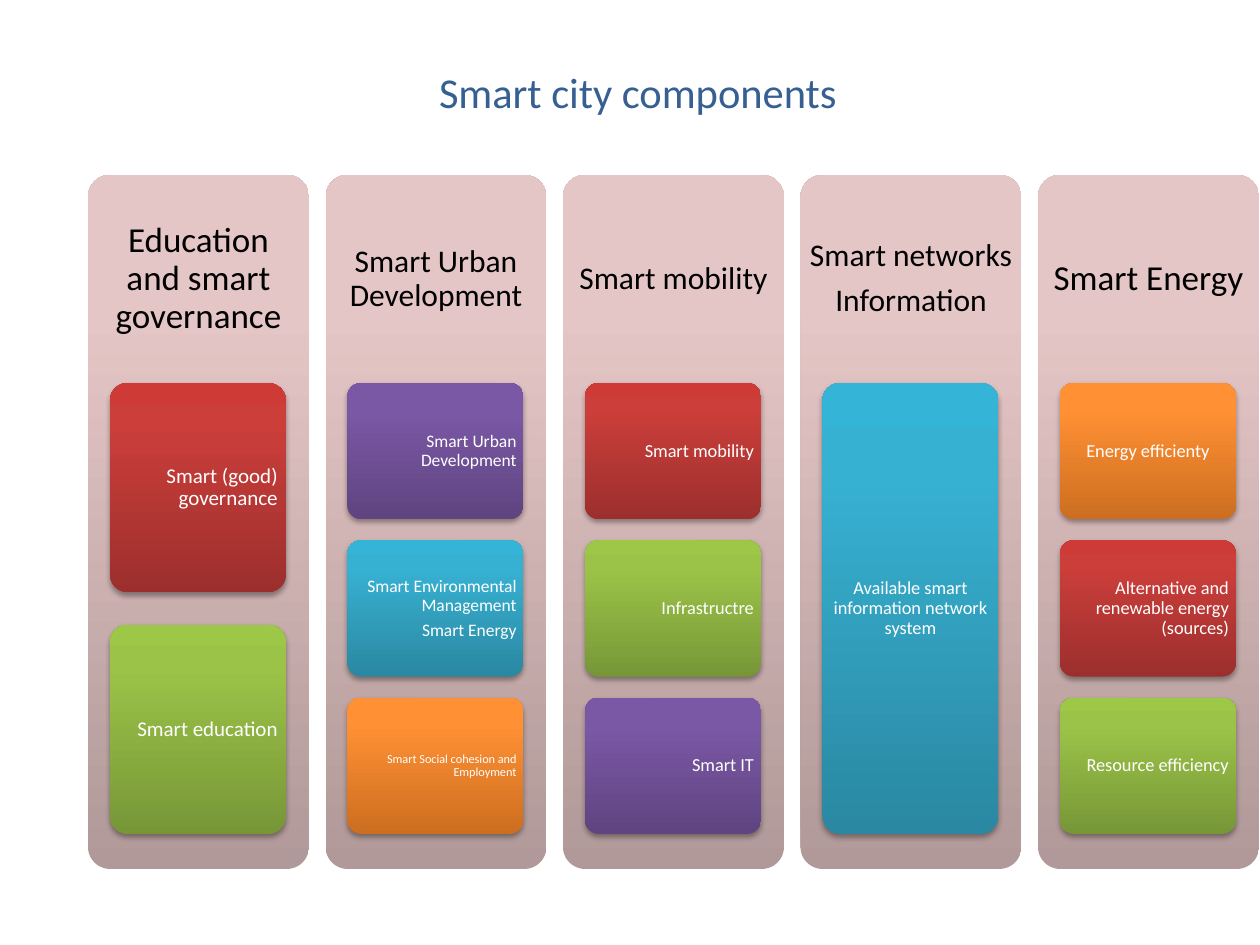
import copy

import pptx
import pptx.dml.color
import pptx.enum.shapes
import pptx.enum.text
import pptx.oxml
import pptx.oxml.ns
import pptx.util

ALIGN = pptx.enum.text.PP_ALIGN
FONT = "Calibri"
EMU_PER_PX = 914400 / 126

TITLE_RUNS = [(" ", 39.6), ("Smart city components", 24.3)]
TITLE_BOX = (63, 37, 1134, 87)

# Gradient colours from bottom to top, at these positions
STOP_POSITIONS = (0, 0.8, 1)
GRADIENTS = {
    "column": ("B09998", "E5C6C6", "E6C7C6"),
    "red": ("9C2F2D", "CB3E3A", "CE3B37"),
    "green": ("779737", "9BC348", "9DC746"),
    "purple": ("5F4480", "7B58A6", "7C57A8"),
    "blue": ("2A88A2", "37B1D2", "34B4D6"),
    "orange": ("CC6E20", "FF9034", "FF9136"),
}

# Heading, heading size, cards as (text, size, colour, alignment)
COLUMNS = [
    ("Education and smart governance", 20, [
        ("Smart (good) governance", 12, "red", ALIGN.RIGHT),
        ("Smart education", 12, "green", ALIGN.RIGHT),
    ]),
    ("Smart Urban Development", 18, [
        ("Smart Urban Development", 10, "purple", ALIGN.RIGHT),
        ("Smart Environmental Management\nSmart Energy", 10, "blue", ALIGN.RIGHT),
        ("Smart Social cohesion and Employment", 7, "orange", ALIGN.RIGHT),
    ]),
    ("Smart mobility", 18, [
        ("Smart mobility", 10.5, "red", ALIGN.RIGHT),
        ("Infrastructre", 10.5, "green", ALIGN.RIGHT),
        ("Smart IT", 10.5, "purple", ALIGN.RIGHT),
    ]),
    ("Smart networks\nInformation", 18, [
        ("Available smart information network system", 10.5, "blue", ALIGN.CENTER),
    ]),
    ("Smart Energy", 20, [
        ("Energy efficienty", 10.5, "orange", ALIGN.CENTER),
        ("Alternative and renewable energy (sources)", 10.5, "red", ALIGN.RIGHT),
        ("Resource efficiency", 10.5, "green", ALIGN.RIGHT),
    ]),
]

COLUMN_LEFT, COLUMN_TOP, COLUMN_WIDTH, COLUMN_HEIGHT = 88, 175, 221, 694
COLUMN_STEP = 237.5
HEADING_HEIGHT = 208
CARD_INDENT, CARD_WIDTH = 22, 176
CARDS_TOP, CARDS_HEIGHT = 383, 451
GAP_RATIO = 0.154  # gap between cards, as a share of card height

SHADOW = (
    '<a:outerShdw xmlns:a="http://schemas.openxmlformats.org/drawingml/2006/main" '
    'blurRad="40000" dist="23000" dir="5400000" rotWithShape="0">'
    '<a:srgbClr val="000000"><a:alpha val="35000"/></a:srgbClr></a:outerShdw>'
)


def px(value):
    return pptx.util.Emu(round(value * EMU_PER_PX))


def rgb(value):
    return pptx.dml.color.RGBColor.from_string(value)


def format_run(run, size, colour):
    run.font.name = FONT
    run.font.size = pptx.util.Pt(size)
    run.font.color.rgb = rgb(colour)


def write_text(shape, text, size, colour, alignment, inset):
    frame = shape.text_frame
    frame.text = text
    frame.word_wrap = True
    frame.vertical_anchor = pptx.enum.text.MSO_ANCHOR.MIDDLE
    frame.margin_left = frame.margin_right = px(inset)
    frame.margin_top = frame.margin_bottom = px(inset)
    for paragraph in frame.paragraphs:
        paragraph.alignment = alignment
        paragraph.line_spacing = 0.9
        paragraph.space_after = pptx.util.Pt(size * 0.35)
        for run in paragraph.runs:
            format_run(run, size, colour)


def add_panel(slide, box, colours, shadow=False):
    """Add a rounded rectangle with a vertical three-stop gradient."""
    shape = slide.shapes.add_shape(
        pptx.enum.shapes.MSO_SHAPE.ROUNDED_RECTANGLE, *map(px, box))
    shape.adjustments[0] = 0.1
    shape.line.fill.background()
    shape.fill.gradient()
    shape.fill.gradient_angle = 90
    stop_list = shape.element.spPr.find(".//" + pptx.oxml.ns.qn("a:gsLst"))
    stop_list.append(copy.deepcopy(stop_list[-1]))
    for stop, position, colour in zip(
            shape.fill.gradient_stops, STOP_POSITIONS, colours):
        stop.position = position
        stop.color.rgb = rgb(colour)
    shape.shadow.inherit = False
    if shadow:
        effects = shape.element.spPr.find(pptx.oxml.ns.qn("a:effectLst"))
        effects.append(pptx.oxml.parse_xml(SHADOW))
    return shape


def add_title(slide):
    title = slide.shapes.title
    title.left, title.top, title.width, title.height = map(px, TITLE_BOX)
    title.text_frame.vertical_anchor = pptx.enum.text.MSO_ANCHOR.MIDDLE
    paragraph = title.text_frame.paragraphs[0]
    paragraph.alignment = ALIGN.CENTER
    for text, size in TITLE_RUNS:
        run = paragraph.add_run()
        run.text = text
        format_run(run, size, "376092")


def add_column(slide, left, heading, heading_size, cards):
    add_panel(slide, (left, COLUMN_TOP, COLUMN_WIDTH, COLUMN_HEIGHT),
              GRADIENTS["column"])
    heading_box = slide.shapes.add_textbox(
        *map(px, (left, COLUMN_TOP, COLUMN_WIDTH, HEADING_HEIGHT)))
    write_text(heading_box, heading, heading_size, "000000", ALIGN.CENTER,
               heading_size / 2)

    count = len(cards)
    height = CARDS_HEIGHT / (count + GAP_RATIO * (count - 1))
    for index, (text, size, colour, alignment) in enumerate(cards):
        top = CARDS_TOP + index * height * (1 + GAP_RATIO)
        card = add_panel(slide, (left + CARD_INDENT, top, CARD_WIDTH, height),
                         GRADIENTS[colour], shadow=True)
        write_text(card, text, size, "FFFFFF", alignment, 3)


def main():
    presentation = pptx.Presentation()
    presentation.slide_width = px(1260)
    presentation.slide_height = px(945)
    slide = presentation.slides.add_slide(presentation.slide_layouts[5])
    add_title(slide)
    for index, column in enumerate(COLUMNS):
        add_column(slide, COLUMN_LEFT + index * COLUMN_STEP, *column)
    presentation.save("out.pptx")


if __name__ == "__main__":
    main()
